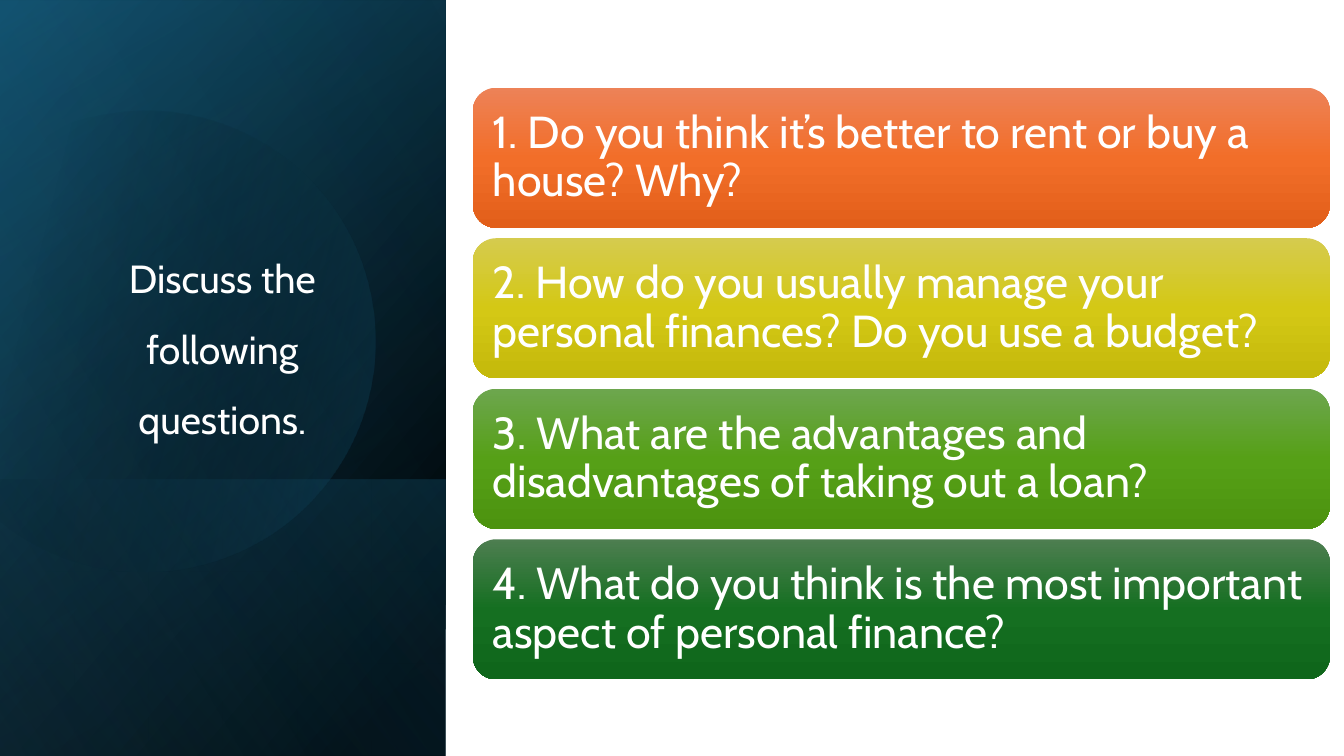
import math
from dataclasses import dataclass

import pptx
import pptx.dml.color
import pptx.enum.shapes
import pptx.enum.text
import pptx.oxml
import pptx.oxml.ns
import pptx.shapes.autoshape
import pptx.slide
import pptx.text.text
import pptx.util

Inches = pptx.util.Inches
RGBColor = pptx.dml.color.RGBColor
Align = pptx.enum.text.PP_ALIGN
Anchor = pptx.enum.text.MSO_ANCHOR
Shape = pptx.shapes.autoshape.Shape

FONT = "Cabin"
WHITE = RGBColor(0xFF, 0xFF, 0xFF)
BLACK = RGBColor(0x00, 0x00, 0x00)
NAVY = RGBColor(0x10, 0x48, 0x62)
TEAL = RGBColor(0x15, 0x60, 0x82)
SKY = RGBColor(0x46, 0xB1, 0xE1)
ORANGES = (RGBColor(0xED, 0x82, 0x57), RGBColor(0xF2, 0x6E, 0x29), RGBColor(0xE2, 0x5F, 0x1A))
YELLOWS = (RGBColor(0xD5, 0xCB, 0x4E), RGBColor(0xD4, 0xC8, 0x15), RGBColor(0xC4, 0xB9, 0x0B))
LIMES = (RGBColor(0x6D, 0xA6, 0x4E), RGBColor(0x56, 0xA0, 0x17), RGBColor(0x4C, 0x93, 0x0F))
GREENS = (RGBColor(0x4D, 0x7E, 0x50), RGBColor(0x15, 0x6F, 0x21), RGBColor(0x0F, 0x66, 0x1B))

FIRST_CARD_TOP, LAST_CARD_TOP = 0.87, 5.35

DISC_LEFT, DISC_TOP, DISC_WIDTH, DISC_HEIGHT = -0.55, 1.06, 4.27, 4.57
DISC_ROTATION = 343.9
# Outline as it lies on the slide, after the rotation
DISC_OUTLINE = (
    ("moveTo", ((1.49, 1.10),)),
    ("cubicBezTo", ((2.46, 1.12), (3.35, 1.77), (3.63, 2.75))),
    ("cubicBezTo", ((3.98, 3.97), (3.28, 5.23), (2.07, 5.58))),
    ("cubicBezTo", ((1.31, 5.80), (0.53, 5.61), (-0.03, 5.14))),
    ("lnTo", ((-0.15, 5.03),)),
    ("lnTo", ((-0.15, 1.75),)),
    ("lnTo", ((0.00, 1.61),)),
    ("cubicBezTo", ((0.23, 1.42), (0.50, 1.28), (0.80, 1.19))),
    ("cubicBezTo", ((1.03, 1.13), (1.26, 1.10), (1.49, 1.10))),
    ("close", ()),
)


@dataclass(frozen=True)
class Stop:
    position: int
    color: RGBColor
    opacity: int = 100


@dataclass(frozen=True)
class Shade:
    """A rectangle laid over the left panel, turned by 90 degrees and mirrored."""
    left: float
    top: float
    width: float
    height: float
    angle: int
    stops: tuple[Stop, ...]


@dataclass(frozen=True)
class Question:
    text: str
    colors: tuple[RGBColor, RGBColor, RGBColor]


SHADES_BELOW_DISC = (
    Shade(-1.54, 1.54, 7.5, 4.42, 50, (Stop(8, BLACK), Stop(100, NAVY))),
    Shade(-1.54, 1.55, 7.5, 4.42, 30, (Stop(0, BLACK, 0), Stop(99, TEAL, 46))),
    Shade(0.84, 3.92, 2.74, 4.42, 130, (Stop(2, TEAL, 29), Stop(100, BLACK, 30))),
)
SHADE_ABOVE_DISC = Shade(-1.54, 1.54, 7.5, 4.42, 120, (Stop(0, BLACK, 0), Stop(99, SKY, 11)))

QUESTIONS = (
    Question("1. Do you think it’s better to rent or buy a house? Why?", ORANGES),
    Question("2. How do you usually manage your personal finances? Do you use a budget?", YELLOWS),
    Question("3. What are the advantages and disadvantages of taking out a loan?", LIMES),
    Question("4. What do you think is the most important aspect of personal finance?", GREENS),
)


def paint_gradient(shape: Shape, angle: int, stops: tuple[Stop, ...]) -> None:
    """Fill with a linear gradient (clockwise angle), without line or shadow."""
    shape.shadow.inherit = False
    shape.line.fill.background()
    shape.fill.gradient()
    shape.fill.gradient_angle = -angle % 360
    stop_list = shape.element.spPr.find(".//" + pptx.oxml.ns.qn("a:gsLst"))
    for default_stop in list(stop_list):
        stop_list.remove(default_stop)
    for stop in stops:
        stop_list.append(pptx.oxml.parse_xml(
            f'<a:gs {pptx.oxml.ns.nsdecls("a")} pos="{stop.position * 1000}">'
            f'<a:srgbClr val="{stop.color}"><a:alpha val="{stop.opacity * 1000}"/>'
            f'</a:srgbClr></a:gs>'))


def write_text(frame: pptx.text.text.TextFrame, text: str, *, size: float,
               line_spacing: float, align: Align, anchor: Anchor,
               side_inset: float, bottom_inset: float) -> None:
    frame.word_wrap = True
    frame.auto_size = pptx.enum.text.MSO_AUTO_SIZE.NONE
    frame.vertical_anchor = anchor
    frame.margin_left = frame.margin_right = Inches(side_inset)
    frame.margin_bottom = Inches(bottom_inset)
    paragraph = frame.paragraphs[0]
    paragraph.alignment = align
    paragraph.line_spacing = line_spacing
    run = paragraph.add_run()
    run.text = text
    run.font.name = FONT
    run.font.size = pptx.util.Pt(size)
    run.font.color.rgb = WHITE


def draw_shade(slide: pptx.slide.Slide, shade: Shade) -> None:
    panel = slide.shapes.add_shape(
        pptx.enum.shapes.MSO_SHAPE.RECTANGLE, Inches(shade.left), Inches(shade.top),
        Inches(shade.width), Inches(shade.height))
    panel.rotation = 90
    panel.element.spPr.xfrm.set("flipH", "1")
    paint_gradient(panel, shade.angle, shade.stops)


def disc_point(x: float, y: float) -> str:
    """Turn a slide position back into the disc's own unrotated frame."""
    turn = math.radians(-DISC_ROTATION)
    dx = x - DISC_LEFT - DISC_WIDTH / 2
    dy = y - DISC_TOP - DISC_HEIGHT / 2
    local_x = DISC_WIDTH / 2 + dx * math.cos(turn) - dy * math.sin(turn)
    local_y = DISC_HEIGHT / 2 + dx * math.sin(turn) + dy * math.cos(turn)
    return f'<a:pt x="{Inches(local_x)}" y="{Inches(local_y)}"/>'


def draw_disc(slide: pptx.slide.Slide) -> None:
    """Draw the faint disc with curved sides, cut off by a chord on the left."""
    left, top = Inches(DISC_LEFT), Inches(DISC_TOP)
    right, bottom = left + Inches(DISC_WIDTH), top + Inches(DISC_HEIGHT)
    builder = slide.shapes.build_freeform(left, top)
    builder.add_line_segments([(right, top), (right, bottom), (left, bottom)])
    disc = builder.convert_to_shape()
    outline = disc.element.spPr.find(".//" + pptx.oxml.ns.qn("a:path"))
    for frame_side in list(outline):
        outline.remove(frame_side)
    for step, points in DISC_OUTLINE:
        outline.append(pptx.oxml.parse_xml(
            f'<a:{step} {pptx.oxml.ns.nsdecls("a")}>'
            f'{"".join(disc_point(x, y) for x, y in points)}</a:{step}>'))
    disc.rotation = DISC_ROTATION
    paint_gradient(disc, 30, (Stop(29, BLACK, 0), Stop(100, TEAL, 43)))


def draw_title(slide: pptx.slide.Slide) -> None:
    title = slide.shapes.title
    title.left, title.top = Inches(0.5), Inches(2.28)
    title.width, title.height = Inches(3.41), Inches(2.62)
    write_text(title.text_frame, "Discuss the following questions.", size=28,
               line_spacing=1.5, align=Align.CENTER, anchor=Anchor.BOTTOM,
               side_inset=0.1, bottom_inset=0.51)
    title.element.getparent().append(title.element)  # bring in front of the panel


def draw_question(slide: pptx.slide.Slide, question: Question, top: float) -> None:
    card = slide.shapes.add_shape(
        pptx.enum.shapes.MSO_SHAPE.ROUNDED_RECTANGLE,
        Inches(4.69), Inches(top), Inches(8.5), Inches(1.39))
    paint_gradient(card, 90, tuple(
        Stop(position, color) for position, color in zip((0, 50, 100), question.colors)))
    write_text(card.text_frame, question.text, size=32, line_spacing=0.9,
               align=Align.LEFT, anchor=Anchor.MIDDLE, side_inset=0.13, bottom_inset=0.05)


def main() -> None:
    deck = pptx.Presentation()
    deck.slide_width, deck.slide_height = Inches(13.33), Inches(7.5)
    slide = deck.slides.add_slide(deck.slide_layouts.get_by_name("Title Only"))
    for shade in SHADES_BELOW_DISC:
        draw_shade(slide, shade)
    draw_disc(slide)
    draw_shade(slide, SHADE_ABOVE_DISC)
    draw_title(slide)
    card_pitch = (LAST_CARD_TOP - FIRST_CARD_TOP) / (len(QUESTIONS) - 1)
    for index, question in enumerate(QUESTIONS):
        draw_question(slide, question, FIRST_CARD_TOP + index * card_pitch)
    deck.save("out.pptx")


if __name__ == "__main__":
    main()
